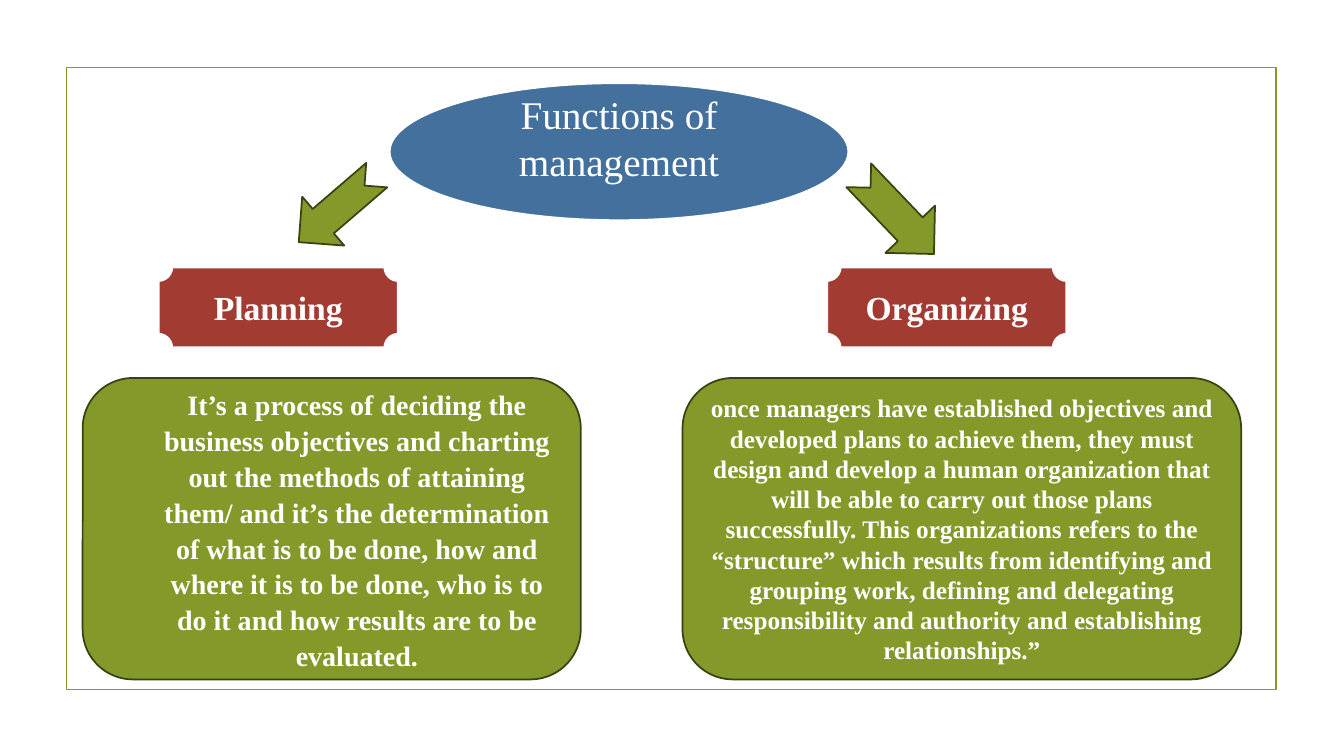
from pptx import Presentation
from pptx.dml.color import RGBColor
from pptx.enum.shapes import MSO_SHAPE
from pptx.enum.text import MSO_ANCHOR, PP_ALIGN
from pptx.util import Inches, Pt

RECT, ELLIPSE = MSO_SHAPE.RECTANGLE, MSO_SHAPE.OVAL
ROUND, PLAQUE = MSO_SHAPE.ROUNDED_RECTANGLE, MSO_SHAPE.PLAQUE
ARROW = MSO_SHAPE.NOTCHED_RIGHT_ARROW
MIDDLE, CENTER = MSO_ANCHOR.MIDDLE, PP_ALIGN.CENTER

PLANNING = (
    "It’s a process of deciding the business objectives and charting out the "
    "methods of attaining them/ and it’s the determination of what is to be done, "
    "how and where it is to be done, who is to do it and how results are to be "
    "evaluated."
)
ORGANIZING = (
    "once managers have established objectives and developed plans to achieve "
    "them, they must design and develop a human organization that will be able to "
    "carry out those plans successfully. This organizations refers to the "
    "“structure” which results from identifying and grouping work, defining and "
    "delegating responsibility and authority and establishing relationships.”"
)


def rgb(value):
    return RGBColor.from_string(value)


def assign(target, values):
    """Set each attribute named in values on target."""
    for name, value in values.items():
        setattr(target, name, value)


class Diagram:
    FONT = "Times New Roman"
    WHITE, GREEN, DARK_GREEN = "FFFFFF", "83992A", "394312"
    BLUE, RED = "44709D", "A23C33"

    def __init__(self, slide):
        self.s = slide

    def shape(self, kind, box, fill, line, width):
        sp = self.s.shapes.add_shape(kind, *map(Inches, box))
        sp.shadow.inherit = False
        if fill:
            sp.fill.solid()
            sp.fill.fore_color.rgb = rgb(fill)
        else:
            sp.fill.background()
        sp.line.color.rgb = rgb(line)
        sp.line.width = Pt(width)
        return sp

    def text(self, sp, text, size, bold=True, frame=None, para=None):
        tf = sp.text_frame
        assign(tf, {"word_wrap": True, "vertical_anchor": MIDDLE, **(frame or {})})
        p = tf.paragraphs[0]
        assign(p, {"alignment": CENTER, **(para or {})})
        r = p.add_run()
        r.text = text
        assign(r.font, {"name": self.FONT, "size": Pt(size), "bold": bold})
        r.font.color.rgb = rgb(self.WHITE)

    def frame(self, box):
        self.shape(RECT, box, None, self.GREEN, 1.25)

    def title(self, box, text):
        sp = self.shape(ELLIPSE, box, self.BLUE, self.WHITE, 2)
        self.text(sp, text, 28, False, {"margin_bottom": Inches(0.34)})

    def label(self, left, text):
        sp = self.shape(PLAQUE, (left, 2.65, 2.38, 0.8), self.RED, self.WHITE, 2)
        self.text(sp, text, 24)

    def panel(self, left, width, text, size, **layout):
        box = (left, 3.75, width, 2.99)
        sp = self.shape(ROUND, box, self.GREEN, self.DARK_GREEN, 1.25)
        self.text(sp, text, size, **layout)

    def arrow(self, box, angle):
        sp = self.shape(ARROW, box, self.GREEN, self.DARK_GREEN, 1.25)
        sp.rotation = angle


def main():
    prs = Presentation()
    prs.slide_width, prs.slide_height = Inches(13.33), Inches(7.5)
    d = Diagram(prs.slides.add_slide(prs.slide_layouts[6]))

    d.frame((0.66, 0.67, 12, 6.17))
    d.title((3.86, 0.82, 4.56, 1.37), "Functions of management")
    d.panel(0.82, 4.94, PLANNING, 20,
            frame={"margin_left": Inches(0.6)},
            para={"line_spacing": 1.07, "space_after": Pt(8)})
    d.panel(6.77, 5.54, ORGANIZING, 18)
    d.label(1.57, "Planning")
    d.label(8.2, "Organizing")
    d.arrow((2.84, 1.75, 1.02, 0.64), 139.3)
    d.arrow((8.35, 1.79, 1.08, 0.68), 46.3)

    prs.save("out.pptx")


if __name__ == "__main__":
    main()
